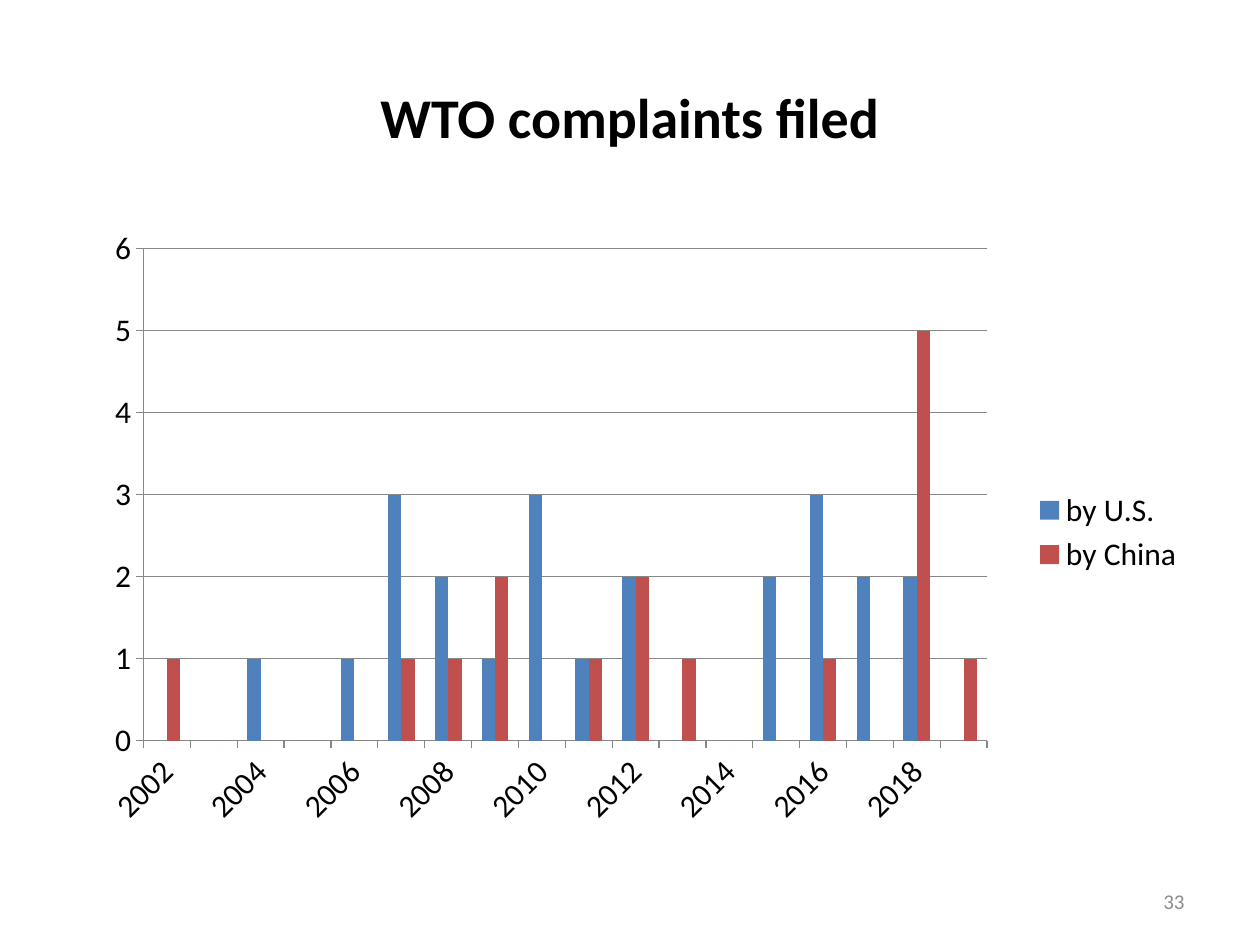
import dataclasses
import typing

import lxml.etree
import pptx
import pptx.chart.data
import pptx.dml.color
import pptx.enum.chart
import pptx.enum.text
import pptx.oxml
import pptx.oxml.ns
import pptx.util

Cm = pptx.util.Cm
Pt = pptx.util.Pt
qn = pptx.oxml.ns.qn

COLORS = {
    "text": "000000",
    "page_number": "8C8C8C",
    "us": "4F81BD",
    "china": "C0504D",
    "grid": "878787",
}
FONT = "Calibri"
YEARS = [str(year) for year in range(2002, 2020)]
PLOT_AREA = {"x": 0.071, "y": 0.045, "w": 0.744, "h": 0.789}


@dataclasses.dataclass
class Complainant:
    name: str
    color: str
    complaints: list[typing.Optional[int]]


@dataclasses.dataclass
class Box:
    left: float
    top: float
    width: float
    height: float

    def lengths(self) -> tuple:
        return Cm(self.left), Cm(self.top), Cm(self.width), Cm(self.height)


COMPLAINANTS = [
    Complainant("by U.S. ", "us", [0, 0, 1, 0, 1, 3, 2, 1, 3, 1, 2, 0, 0, 2, 3, 2, 2, 0]),
    Complainant("by China", "china", [1, 0, 0, 0, 0, 1, 1, 2, 0, 1, 2, 1, 0, 0, 1, None, 5, 1]),
]
TITLE_BOX = Box(1.27, 0.76, 22.86, 3.18)
CHART_BOX = Box(1.27, 4.45, 22.86, 12.57)
NUMBER_BOX = Box(18.21, 17.65, 5.92, 1.02)


def rgb(key: str) -> pptx.dml.color.RGBColor:
    return pptx.dml.color.RGBColor.from_string(COLORS[key])


def apply(target: typing.Any, values: dict) -> None:
    for attribute, value in values.items():
        setattr(target, attribute, value)


def format_font(font: typing.Any, size: float, color: str, bold: bool = False) -> None:
    apply(font, {"name": FONT, "size": Pt(size), "bold": bold})
    font.color.rgb = rgb(color)


def write_text(shape: typing.Any, box: Box, text: str, size: float, color: str,
               align: typing.Any, bold: bool = False) -> None:
    apply(shape, dict(zip(("left", "top", "width", "height"), box.lengths())))
    frame = shape.text_frame
    apply(frame, {"text": text, "word_wrap": True,
                  "vertical_anchor": pptx.enum.text.MSO_ANCHOR.MIDDLE})
    frame.paragraphs[0].alignment = align
    format_font(frame.paragraphs[0].runs[0].font, size, color, bold)


def format_line(line: typing.Any) -> None:
    line.color.rgb = rgb("grid")
    line.width = Pt(0.75)


def place_plot_area(chart: typing.Any) -> None:
    plot_area = chart.plots[0]._element.getparent()
    for old_layout in plot_area.findall(qn("c:layout")):
        plot_area.remove(old_layout)
    layout = lxml.etree.Element(qn("c:layout"))
    manual = lxml.etree.SubElement(layout, qn("c:manualLayout"))
    settings = {"layoutTarget": "inner", "xMode": "edge", "yMode": "edge", **PLOT_AREA}
    for tag, value in settings.items():
        lxml.etree.SubElement(manual, qn(f"c:{tag}")).set("val", str(value))
    plot_area.insert(0, layout)


def slant_year_labels(axis: typing.Any) -> None:
    axis._element.find(qn("c:txPr")).find(qn("a:bodyPr")).set("rot", "-2700000")
    skip = lxml.etree.Element(qn("c:tickLblSkip"))
    skip.set("val", "2")
    axis._element.find(qn("c:lblOffset")).addnext(skip)


def add_complaints_chart(slide: typing.Any, box: Box) -> None:
    data = pptx.chart.data.CategoryChartData()
    data.categories = YEARS
    for complainant in COMPLAINANTS:
        data.add_series(complainant.name, complainant.complaints)
    chart = slide.shapes.add_chart(
        pptx.enum.chart.XL_CHART_TYPE.COLUMN_CLUSTERED, *box.lengths(), data).chart
    apply(chart, {"has_title": False, "has_legend": True})
    apply(chart.legend, {"position": pptx.enum.chart.XL_LEGEND_POSITION.RIGHT,
                         "include_in_layout": False})
    apply(chart.plots[0], {"gap_width": 150, "overlap": 0, "vary_by_categories": False})
    format_font(chart.font, 18, "text")
    for series, complainant in zip(chart.plots[0].series, COMPLAINANTS):
        series.invert_if_negative = False
        series.format.fill.solid()
        series.format.fill.fore_color.rgb = rgb(complainant.color)
    for axis in (chart.category_axis, chart.value_axis):
        axis.major_tick_mark = pptx.enum.chart.XL_TICK_MARK.OUTSIDE
        format_line(axis.format.line)
        format_font(axis.tick_labels.font, 18, "text")
    apply(chart.value_axis, {"minimum_scale": 0, "maximum_scale": 6, "major_unit": 1,
                             "has_major_gridlines": True})
    format_line(chart.value_axis.major_gridlines.format.line)
    slant_year_labels(chart.category_axis)
    place_plot_area(chart)


def main() -> None:
    deck = pptx.Presentation()
    apply(deck, {"slide_width": Cm(25.4), "slide_height": Cm(19.05)})
    slide = deck.slides.add_slide(deck.slide_layouts[5])
    align = pptx.enum.text.PP_ALIGN
    write_text(slide.shapes.title, TITLE_BOX, "WTO complaints filed", 32, "text",
               align.CENTER, bold=True)
    add_complaints_chart(slide, CHART_BOX)
    page_number = slide.shapes.add_textbox(*NUMBER_BOX.lengths())
    write_text(page_number, NUMBER_BOX, "33", 12, "page_number", align.RIGHT)
    deck.save("out.pptx")


if __name__ == "__main__":
    main()
